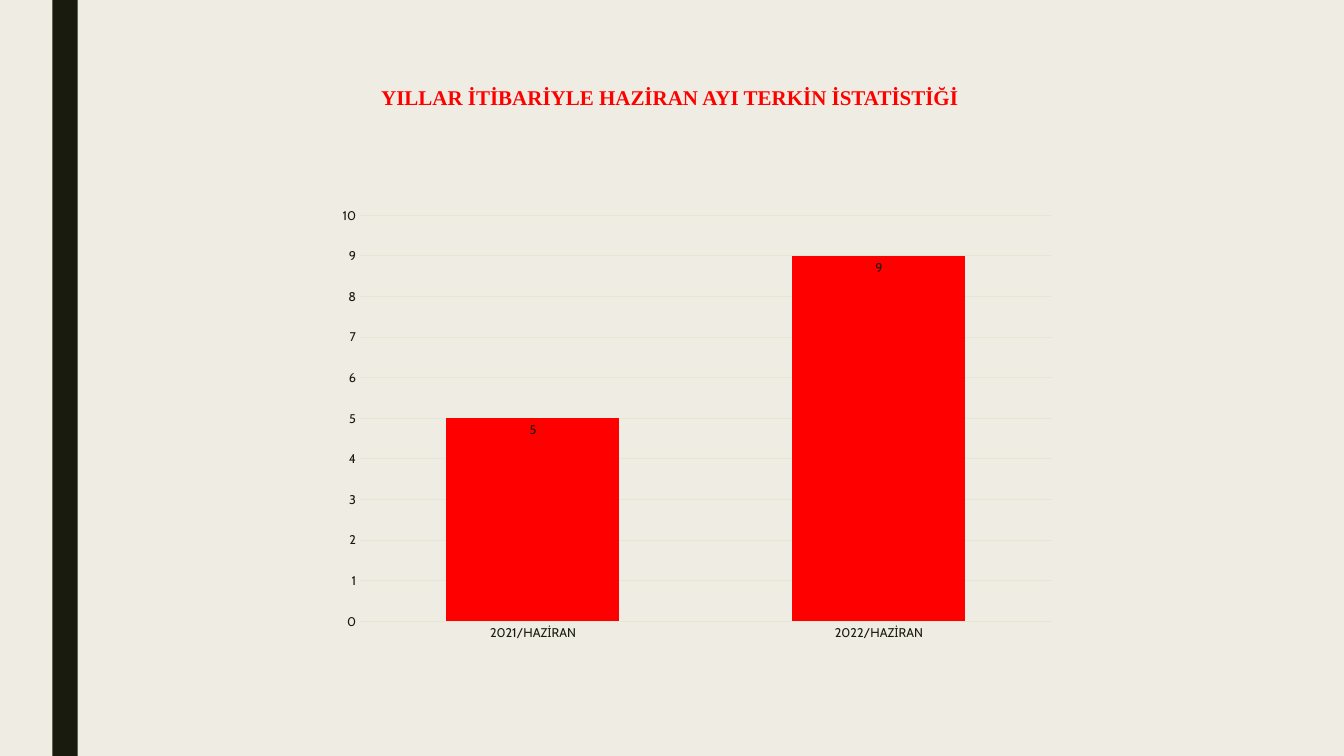
"""Build the slide with the June cancellation statistics by year."""
from pptx import Presentation
from pptx.chart.data import CategoryChartData
from pptx.dml.color import RGBColor
from pptx.enum.chart import XL_CHART_TYPE, XL_LABEL_POSITION, XL_TICK_MARK
from pptx.enum.shapes import MSO_SHAPE
from pptx.enum.text import MSO_ANCHOR, MSO_AUTO_SIZE, PP_ALIGN
from pptx.util import Cm, Pt


def paint(fill, color):
    fill.solid()
    fill.fore_color.rgb = RGBColor.from_string(color)


def apply_format(target, values):
    for name, value in values.items():
        if name == "color":
            target.color.rgb = RGBColor.from_string(value)
        else:
            setattr(target, name, value)


INK, RED, GRID, PAPER = "191B0E", "FF0000", "E4E7D1", "EFEDE3"
CHART_FONT = {"name": "Cabin", "size": Pt(9), "bold": False, "color": INK}
GRID_LINE = {"width": Pt(0.75), "color": GRID}

deck = Presentation()
apply_format(deck, {"slide_width": Cm(33.87), "slide_height": Cm(19.05)})
page = deck.slides.add_slide(deck.slide_layouts[5])
paint(page.background.fill, PAPER)

stripe = page.shapes.add_shape(MSO_SHAPE.RECTANGLE, Cm(1.32), 0, Cm(0.64), deck.slide_height)
stripe.shadow.inherit = False
paint(stripe.fill, INK)
stripe.line.fill.background()

title = page.shapes.title
apply_format(title, {"left": Cm(9.35), "top": Cm(2.08), "width": Cm(15.52), "height": Cm(0.97)})
apply_format(title.text_frame, {
    "word_wrap": True, "auto_size": MSO_AUTO_SIZE.NONE, "vertical_anchor": MSO_ANCHOR.TOP})
para = title.text_frame.paragraphs[0]
apply_format(para, {"alignment": PP_ALIGN.LEFT, "line_spacing": 0.89})
span = para.add_run()
span.text = "YILLAR İTİBARİYLE HAZİRAN AYI TERKİN İSTATİSTİĞİ"
apply_format(span.font, {"name": "Times New Roman", "size": Pt(15), "bold": True, "color": RED})

statistics = CategoryChartData()
statistics.categories = ["2021/HAZİRAN", "2022/HAZİRAN"]
statistics.add_series("Series 1", [5, 9])
chart = page.shapes.add_chart(
    XL_CHART_TYPE.COLUMN_CLUSTERED, Cm(8.26), Cm(5), Cm(18.62), Cm(11.38), statistics).chart
apply_format(chart, {"has_legend": False, "has_title": False})
apply_format(chart.font, {"name": "Cabin", "size": Pt(10), "color": "000000"})

for axis in (chart.category_axis, chart.value_axis):
    apply_format(axis, {
        "major_tick_mark": XL_TICK_MARK.NONE, "minor_tick_mark": XL_TICK_MARK.NONE})
    apply_format(axis.tick_labels.font, CHART_FONT)
apply_format(chart.category_axis.format.line, GRID_LINE)
apply_format(chart.value_axis, {
    "minimum_scale": 0, "maximum_scale": 10, "major_unit": 1, "has_major_gridlines": True})
chart.value_axis.format.line.fill.background()
apply_format(chart.value_axis.major_gridlines.format.line, GRID_LINE)

plot = chart.plots[0]
apply_format(plot, {
    "gap_width": 100, "overlap": -24, "vary_by_categories": False, "has_data_labels": True})
apply_format(plot.data_labels, {"show_value": True, "position": XL_LABEL_POSITION.INSIDE_END})
apply_format(plot.data_labels.font, CHART_FONT)
paint(plot.series[0].format.fill, RED)

deck.save("out.pptx")
